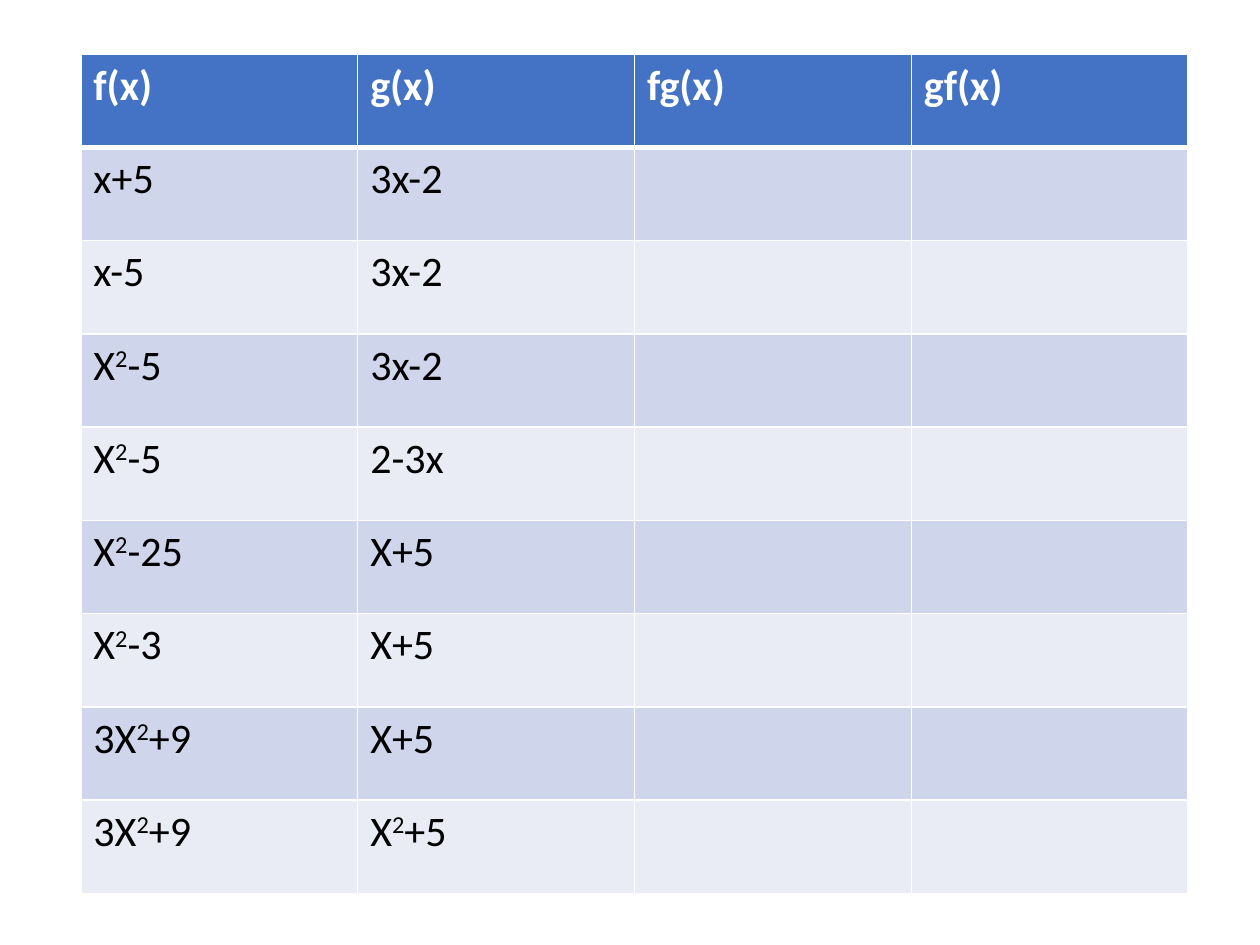
import pptx
import pptx.util
import pptx.dml.color
import pptx.oxml
import pptx.oxml.ns
from pptx.util import Cm

RGBColor = pptx.dml.color.RGBColor
WHITE = RGBColor(0xFF, 0xFF, 0xFF)
BLACK = RGBColor(0x00, 0x00, 0x00)
HEADER_BLUE = RGBColor(0x44, 0x72, 0xC4)
BAND_DARK = RGBColor(0xCF, 0xD5, 0xEA)
BAND_LIGHT = RGBColor(0xE9, 0xEB, 0xF5)

HEADER_FONT = {"name": "Calibri", "size": pptx.util.Pt(24), "bold": True}
BODY_FONT = {**HEADER_FONT, "bold": False}

# Carets enclose the superscript part of an expression
HEADINGS = ["f(x)", "g(x)", "fg(x)", "gf(x)"]
FUNCTIONS = [
    ("x+5", "3x-2"),
    ("x-5", "3x-2"),
    ("X^2^-5", "3x-2"),
    ("X^2^-5", "2-3x"),
    ("X^2^-25", "X+5"),
    ("X^2^-3", "X+5"),
    ("3X^2^+9", "X+5"),
    ("3X^2^+9", "X^2^+5"),
]
COLUMN_WIDTH = Cm(5.58)
ROW_HEIGHT = Cm(1.88)


def write_expression(cell, expression, font_values, color):
    para = cell.text_frame.paragraphs[0]
    for index, part in enumerate(expression.split("^")):
        span = para.add_run()
        span.text = part
        for name, value in font_values.items():
            setattr(span.font, name, value)
        span.font.color.rgb = color
        if index % 2:
            span.font._element.set("baseline", "30000")


def set_borders(cell, widths):
    properties = cell._tc.get_or_add_tcPr()
    for side, width in widths.items():
        properties.append(pptx.oxml.parse_xml(
            f'<a:ln{side} {pptx.oxml.ns.nsdecls("a")} w="{pptx.util.Pt(width)}">'
            f'<a:solidFill><a:srgbClr val="{WHITE}"/></a:solidFill></a:ln{side}>'))


def format_cell(cell, fill_color, border_widths):
    set_borders(cell, border_widths)
    cell.fill.solid()
    cell.fill.fore_color.rgb = fill_color


def add_function_table(page):
    rows = [HEADINGS] + [[*pair, "", ""] for pair in FUNCTIONS]
    frame = page.shapes.add_table(
        len(rows), len(HEADINGS), Cm(1.63), Cm(1.09),
        COLUMN_WIDTH * len(HEADINGS), ROW_HEIGHT * len(rows))
    table = frame.table
    for column in table.columns:
        column.width = COLUMN_WIDTH

    for row_index, expressions in enumerate(rows):
        table.rows[row_index].height = ROW_HEIGHT
        # Header row, then alternating bands
        if row_index == 0:
            fill, font, color = HEADER_BLUE, HEADER_FONT, WHITE
        else:
            fill = BAND_DARK if row_index % 2 else BAND_LIGHT
            font, color = BODY_FONT, BLACK
        # The rule under the header is thicker
        borders = {"L": 1, "R": 1,
                   "T": 3 if row_index == 1 else 1,
                   "B": 3 if row_index == 0 else 1}
        for column_index, expression in enumerate(expressions):
            cell = table.cell(row_index, column_index)
            format_cell(cell, fill, borders)
            if expression:
                write_expression(cell, expression, font, color)


def main():
    deck = pptx.Presentation()
    deck.slide_width, deck.slide_height = Cm(25.4), Cm(19.05)
    page = deck.slides.add_slide(deck.slide_layouts[6])
    add_function_table(page)
    deck.save("out.pptx")


if __name__ == "__main__":
    main()
